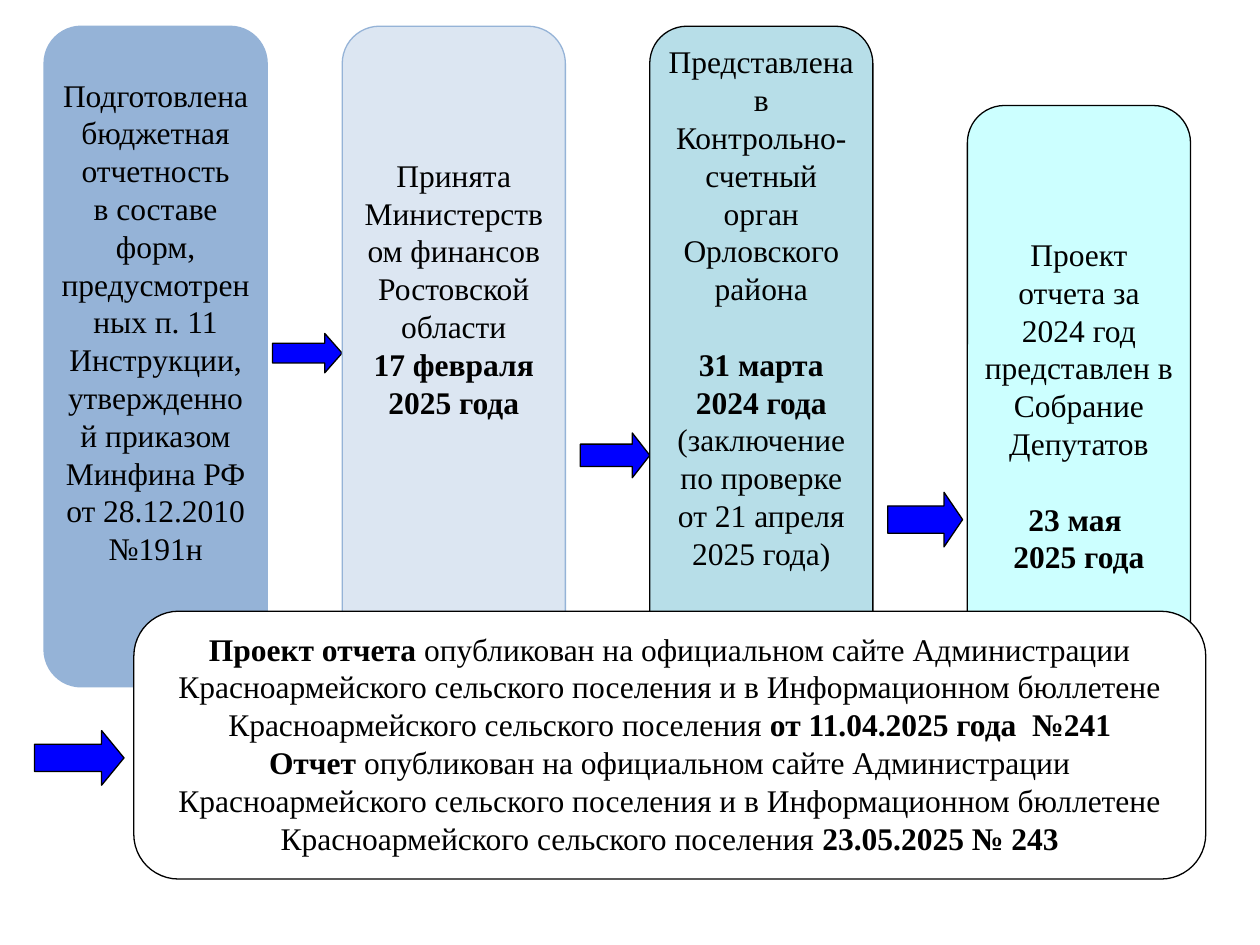
import pptx
import pptx.dml.color
import pptx.enum.shapes
import pptx.enum.text
import pptx.util
from dataclasses import dataclass
from typing import NamedTuple

Pt = pptx.util.Pt
Shapes = pptx.enum.shapes.MSO_SHAPE

COLORS = {
    "black": "000000",
    "white": "FFFFFF",
    "arrow": "0000FF",
    "steel": "95B3D7",
    "pale": "DCE6F2",
    "teal": "B7DEE8",
    "cyan": "CCFFFF",
}
FONT = "Times New Roman"
FONT_SIZE = 18
LINE = 21.6
INSET = 3
STAGE_WIDTH, STAGE_HEIGHT = 127.5, 377.5


class Span(NamedTuple):
    text: str
    bold: bool = False


@dataclass
class Paragraph:
    spans: list[Span]
    gap: float = 0


@dataclass
class Card:
    left: float
    top: float
    paragraphs: list[Paragraph]
    fill: str
    line: str = "black"
    width: float = STAGE_WIDTH
    height: float = STAGE_HEIGHT
    lead: float = 0


@dataclass
class Arrow:
    left: float
    top: float
    width: float
    height: float
    head: float


def plain(text: str) -> Paragraph:
    return Paragraph([Span(text)])


def strong(text: str, gap: float = 0) -> Paragraph:
    return Paragraph([Span(text, True)], gap)


def color(name: str) -> pptx.dml.color.RGBColor:
    return pptx.dml.color.RGBColor.from_string(COLORS[name])


def add_box(slide, kind, box: Card | Arrow, fill: str, line: str):
    shape = slide.shapes.add_shape(
        kind, Pt(box.left), Pt(box.top), Pt(box.width), Pt(box.height))
    shape.shadow.inherit = False
    shape.fill.solid()
    shape.fill.fore_color.rgb = color(fill)
    shape.line.color.rgb = color(line)
    shape.line.width = Pt(0.75)
    return shape


def draw_arrow(slide, arrow: Arrow) -> None:
    shape = add_box(slide, Shapes.RIGHT_ARROW, arrow, "arrow", "black")
    shape.adjustments[0] = 0.5
    shape.adjustments[1] = arrow.head


def draw_card(slide, card: Card) -> None:
    frame = add_box(slide, Shapes.ROUNDED_RECTANGLE, card, card.fill, card.line).text_frame
    frame.word_wrap = True
    frame.vertical_anchor = pptx.enum.text.MSO_ANCHOR.TOP
    frame.margin_left = frame.margin_right = frame.margin_bottom = Pt(INSET)
    frame.margin_top = Pt(INSET + card.lead)
    for index, content in enumerate(card.paragraphs):
        paragraph = frame.add_paragraph() if index else frame.paragraphs[0]
        paragraph.alignment = pptx.enum.text.PP_ALIGN.CENTER
        paragraph.space_before = Pt(content.gap)
        paragraph.font.name = FONT
        paragraph.font.size = Pt(FONT_SIZE)
        paragraph.font.color.rgb = color("black")
        uniform = len({span.bold for span in content.spans}) == 1
        if uniform:
            paragraph.font.bold = content.spans[0].bold
        for span in content.spans:
            run = paragraph.add_run()
            run.text = span.text
            if not uniform:
                run.font.bold = span.bold


PUBLISHED = ("опубликован на официальном сайте Администрации Красноармейского "
             "сельского поселения и в Информационном бюллетене "
             "Красноармейского сельского поселения ")

PREPARED = Card(25.2, 15, [
    plain("Подготовлена"),
    plain("бюджетная"),
    plain("отчетность"),
    plain("в составе форм, предусмотренных п. 11 Инструкции, утвержденной "
          "приказом Минфина РФ от 28.12.2010 №191н"),
], "steel", "steel", lead=19)
ACCEPTED = Card(195.6, 15, [
    plain("Принята Министерством финансов Ростовской области"),
    strong("17 февраля 2025 года"),
], "pale", "steel", lead=3 * LINE)
AUDITED = Card(371.3, 15, [
    plain("Представлена в Контрольно-счетный орган Орловского района"),
    strong("31 марта 2024 года", LINE),
    plain("(заключение по проверке от 21 апреля 2025 года)"),
], "teal")
SUBMITTED = Card(552.8, 60.3, [
    plain("Проект отчета за 2024 год представлен в Собрание"),
    plain("Депутатов"),
    strong("23 мая ", LINE),
    strong("2025 года"),
], "cyan", lead=3 * LINE)
PUBLICATION = Card(76.5, 349.3, [
    Paragraph([Span("Проект отчета", True), Span(" " + PUBLISHED),
               Span("от 11.04.2025 года  №241", True)]),
    Paragraph([Span("Отчет ", True), Span(PUBLISHED),
               Span("23.05.2025 № 243", True)]),
], "white", width=612.5, height=153)

FLOW = [
    PREPARED,
    Arrow(155.7, 190.5, 39.8, 22.6, 0.44),
    ACCEPTED,
    Arrow(331.6, 247.4, 39.7, 25.6, 0.39),
    AUDITED,
    Arrow(507.3, 281.3, 42.8, 31.2, 0.34),
    SUBMITTED,
    PUBLICATION,
    Arrow(19.7, 417.5, 51.2, 31.2, 0.41),
]


def main() -> None:
    deck = pptx.Presentation()
    deck.slide_width, deck.slide_height = Pt(720), Pt(540)
    slide = deck.slides.add_slide(deck.slide_layouts[6])
    for part in FLOW:
        if isinstance(part, Card):
            draw_card(slide, part)
        else:
            draw_arrow(slide, part)
    deck.save("out.pptx")


if __name__ == "__main__":
    main()
